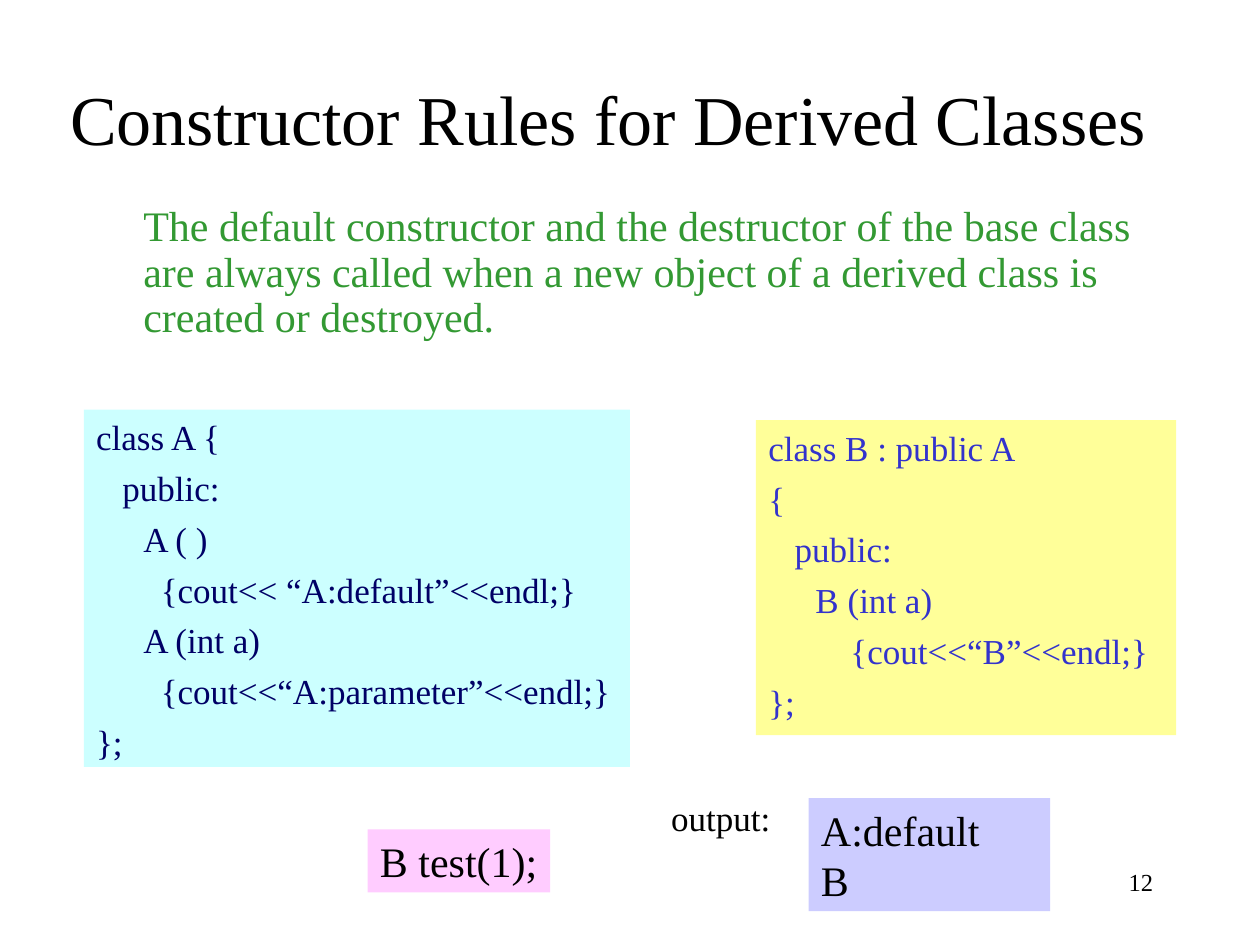
import pptx
import pptx.dml.color
import pptx.enum.shapes
import pptx.enum.text
import pptx.util

Cm = pptx.util.Cm
Pt = pptx.util.Pt
Align = pptx.enum.text.PP_ALIGN
Anchor = pptx.enum.text.MSO_ANCHOR

COLOURS = {
    "black": "000000", "green": "339933", "navy": "000066", "blue": "3333CC",
    "cyan": "CCFFFF", "yellow": "FFFF99", "pink": "FFCCFF", "lavender": "CCCCFF",
}

CLASS_A = """class A {
   public:
\tA ( )
\t  {cout<< “A:default”<<endl;}
\tA (int a)
\t  {cout<<“A:parameter”<<endl;}
};"""

CLASS_B = """class B : public A
{
   public:
\tB (int a)
\t    {cout<<“B”<<endl;}
};"""


def rgb(colour):
    return pptx.dml.color.RGBColor.from_string(COLOURS[colour])


def write(frame, text, size=24, colour="black", align=Align.LEFT, anchor=Anchor.TOP,
          margin=0, indent=0, spacing=None, gap=0, wrap=True, grow=False):
    frame.word_wrap = wrap
    frame.vertical_anchor = anchor
    resize = pptx.enum.text.MSO_AUTO_SIZE
    frame.auto_size = resize.SHAPE_TO_FIT_TEXT if grow else resize.NONE
    for index, line in enumerate(text.split("\n")):
        paragraph = frame.add_paragraph() if index else frame.paragraphs[0]
        properties = paragraph._p.get_or_add_pPr()
        properties.set("marL", str(Cm(margin)))
        properties.set("indent", str(Cm(indent)))
        paragraph.alignment = align
        if spacing:
            paragraph.line_spacing = spacing
        if index and gap:
            paragraph.space_before = Pt(gap)
        run = paragraph.add_run()
        run.text = line
        run.font.name = "Times New Roman"
        run.font.size = Pt(size)
        run.font.color.rgb = rgb(colour)


class Deck:
    """Holds the presentation's style and its current slide."""

    def __init__(self):
        self.presentation = pptx.Presentation()
        self.presentation.slide_width = Cm(25.4)
        self.presentation.slide_height = Cm(19.05)
        self.slide = self.presentation.slides.add_slide(self.presentation.slide_layouts[6])

    def label(self, text, left, top, width, height, **style):
        box = self.slide.shapes.add_textbox(Cm(left), Cm(top), Cm(width), Cm(height))
        write(box.text_frame, text, **style)

    def panel(self, text, fill, left, top, width, height, **style):
        rectangle = self.slide.shapes.add_shape(
            pptx.enum.shapes.MSO_SHAPE.RECTANGLE, Cm(left), Cm(top), Cm(width), Cm(height))
        rectangle.shadow.inherit = False
        rectangle.fill.solid()
        rectangle.fill.fore_color.rgb = rgb(fill)
        rectangle.line.fill.background()
        write(rectangle.text_frame, text, **style)

    def code(self, text, fill, left, top, width, height, colour):
        self.panel(text, fill, left, top, width, height, size=20, colour=colour,
                   margin=0.95, indent=-0.95, gap=5)


def main():
    deck = Deck()
    deck.label("12", 18.2, 17.35, 5.3, 1.27, size=14, align=Align.RIGHT)
    deck.label("Constructor Rules for Derived Classes ", 0, 0.42, 24.87, 2.92,
               size=40, align=Align.CENTER, anchor=Anchor.BOTTOM)
    deck.label("The default constructor and the destructor of the base class are always "
               "called when a new object of a derived class is created or destroyed.",
               1.69, 4.02, 22.01, 4, colour="green", margin=0.95, spacing=0.9)
    deck.code(CLASS_A, "cyan", 1.69, 8.26, 11.01, 7.2, "navy")
    deck.code(CLASS_B, "yellow", 15.24, 8.47, 8.47, 6.35, "blue")
    deck.panel("B test(1);", "pink", 7.41, 16.72, 3.68, 1.27, wrap=False, grow=True)
    deck.panel("A:default\nB", "lavender", 16.3, 16.09, 4.87, 2.28, grow=True)
    deck.label("output:", 13.28, 15.93, 2.52, 1.1, size=20, wrap=False, grow=True)
    deck.presentation.save("out.pptx")


if __name__ == "__main__":
    main()
